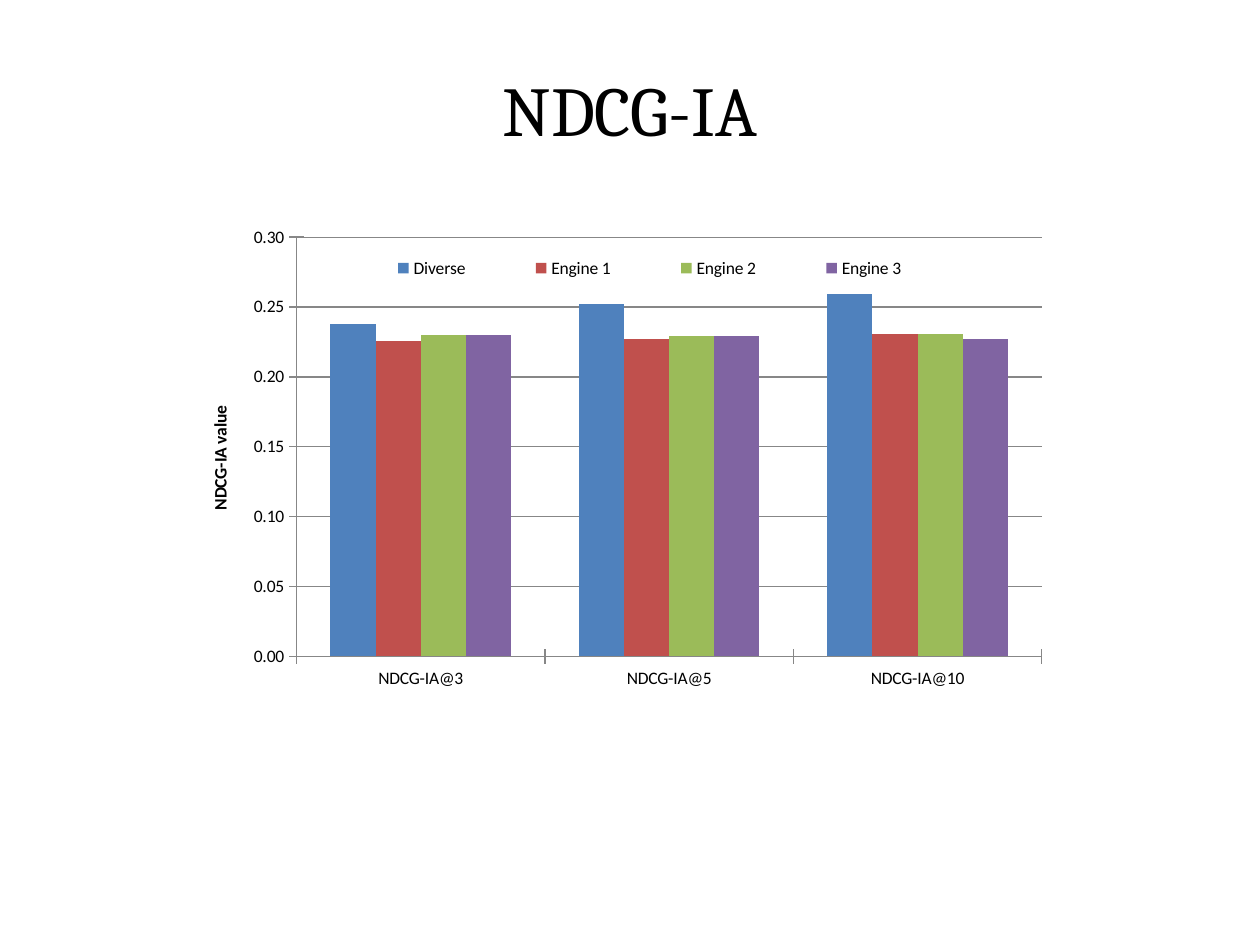
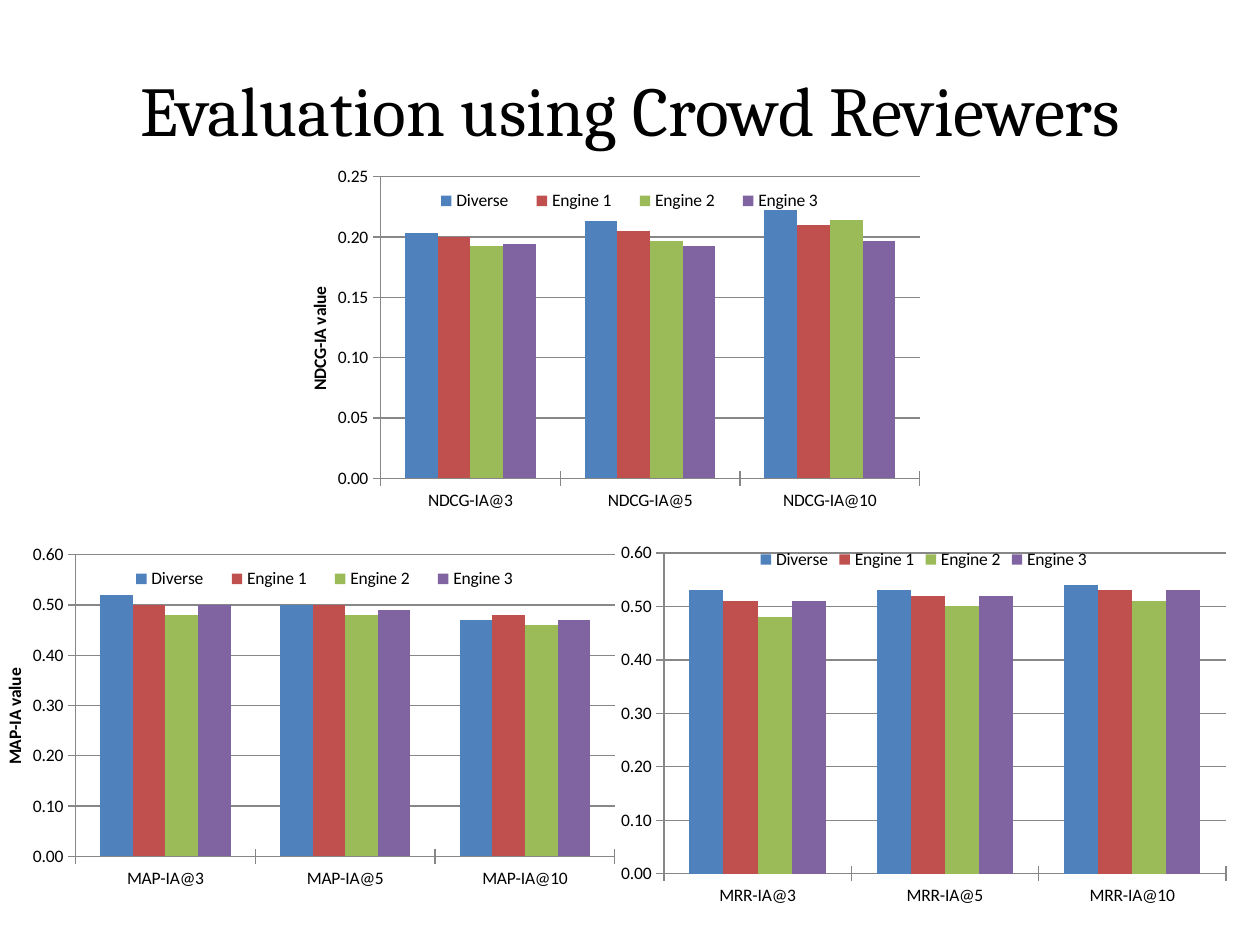
from dataclasses import dataclass

from pptx import Presentation
from pptx.chart.data import CategoryChartData
from pptx.dml.color import RGBColor
from pptx.enum.chart import XL_CHART_TYPE, XL_LEGEND_POSITION, XL_TICK_MARK
from pptx.enum.text import MSO_ANCHOR, PP_ALIGN
from pptx.oxml import parse_xml
from pptx.oxml.ns import nsdecls
from pptx.util import Inches, Pt


@dataclass(frozen=True)
class Theme:
    text: RGBColor = RGBColor(0, 0, 0)
    axis: RGBColor = RGBColor(0x87, 0x87, 0x87)
    series: tuple = ("4F81BD", "C0504D", "9BBB59", "8064A2")
    title_font: str = "Cambria"
    title_size: int = 40
    chart_font: str = "Calibri"
    chart_size: int = 10
    axis_width: float = 0.75


THEME = Theme()
ENGINES = ("Diverse", "Engine 1", "Engine 2", "Engine 3")
DEPTHS = (3, 5, 10)
TITLE_BOX = (0.5, 0.3, 9, 1.12)

# Inner plot and legend areas as fractions of the chart: x, y, width, height
WIDE_LAYOUT = {"plot": (0.119, 0.051, 0.825, 0.798), "legend": (0.16, 0.07, 0.7, 0.08)}
SMALL_LAYOUT = {"plot": (0.12, 0.051, 0.856, 0.798), "legend": (0.18, 0.075, 0.67, 0.08)}

# One row of values per engine, one value per depth
NDCG_VALUES = ((0.238, 0.252, 0.259), (0.226, 0.227, 0.231),
               (0.23, 0.229, 0.231), (0.23, 0.229, 0.227))
CROWD_NDCG_VALUES = ((0.203, 0.213, 0.222), (0.2, 0.205, 0.21),
                     (0.193, 0.197, 0.214), (0.194, 0.193, 0.197))
CROWD_MAP_VALUES = ((0.52, 0.5, 0.47), (0.5, 0.5, 0.48),
                    (0.48, 0.48, 0.46), (0.5, 0.49, 0.47))
CROWD_MRR_VALUES = ((0.53, 0.53, 0.54), (0.51, 0.52, 0.53),
                    (0.48, 0.5, 0.51), (0.51, 0.52, 0.53))


def apply_format(target, values):
    for name, value in values.items():
        setattr(target, name, value)


def style_font(font, name, size, bold=False):
    apply_format(font, {"name": name, "size": Pt(size), "bold": bold})
    font.color.rgb = THEME.text


def layout_xml(area, target=""):
    """Return a manual chart layout for the given fractions."""
    x, y, width, height = area
    return parse_xml(
        f'<c:layout {nsdecls("c")}><c:manualLayout>{target}'
        '<c:xMode val="edge"/><c:yMode val="edge"/>'
        f'<c:x val="{x}"/><c:y val="{y}"/><c:w val="{width}"/><c:h val="{height}"/>'
        "</c:manualLayout></c:layout>"
    )


def place_chart_parts(chart, layout):
    for old in chart.element.xpath(".//c:plotArea/c:layout | .//c:legend/c:layout"):
        old.getparent().remove(old)
    plot_area = chart.element.xpath(".//c:plotArea")[0]
    plot_area.insert(0, layout_xml(layout["plot"], '<c:layoutTarget val="inner"/>'))
    legend_position = chart.element.xpath(".//c:legend/c:legendPos")[0]
    legend_position.addnext(layout_xml(layout["legend"]))


def add_title(page, text, box=TITLE_BOX):
    frame = page.shapes.add_textbox(*map(Inches, box)).text_frame
    apply_format(frame, {"word_wrap": True, "vertical_anchor": MSO_ANCHOR.MIDDLE})
    para = frame.paragraphs[0]
    para.alignment = PP_ALIGN.CENTER
    span = para.add_run()
    span.text = text
    style_font(span.font, THEME.title_font, THEME.title_size)


def style_axes(chart, maximum, step, axis_title):
    value_axis = chart.value_axis
    apply_format(value_axis, {"minimum_scale": 0, "maximum_scale": maximum,
                              "major_unit": step, "has_major_gridlines": True})
    apply_format(value_axis.tick_labels, {"number_format": "#,##0.00",
                                          "number_format_is_linked": False})
    for axis in (chart.category_axis, value_axis):
        axis.major_tick_mark = XL_TICK_MARK.CROSS
    for part in (chart.category_axis, value_axis, value_axis.major_gridlines):
        part.format.line.color.rgb = THEME.axis
        part.format.line.width = Pt(THEME.axis_width)

    value_axis.has_title = bool(axis_title)
    if axis_title:
        span = value_axis.axis_title.text_frame.paragraphs[0].add_run()
        span.text = axis_title
        style_font(span.font, THEME.chart_font, THEME.chart_size, bold=True)


def add_metric_chart(page, box, metric, values, maximum, step, layout=None):
    """Compare the engines; without a layout the legend overlays the top."""
    data = CategoryChartData(number_format="General")
    data.categories = [f"{metric}@{depth}" for depth in DEPTHS]
    for engine, row in zip(ENGINES, values):
        data.add_series(engine, row)
    chart = page.shapes.add_chart(
        XL_CHART_TYPE.COLUMN_CLUSTERED, *map(Inches, box), data).chart
    chart.has_title = False
    style_font(chart.font, THEME.chart_font, THEME.chart_size)

    # Columns
    plot = chart.plots[0]
    apply_format(plot, {"vary_by_categories": False, "gap_width": 150, "overlap": 0})
    for series, color in zip(plot.series, THEME.series):
        series.format.fill.solid()
        series.format.fill.fore_color.rgb = RGBColor.from_string(color)

    # Axes and legend
    style_axes(chart, maximum, step, f"{metric} value" if layout else None)
    chart.has_legend = True
    position = XL_LEGEND_POSITION.RIGHT if layout else XL_LEGEND_POSITION.TOP
    apply_format(chart.legend, {"position": position, "include_in_layout": not layout})
    if layout:
        place_chart_parts(chart, layout)


def build_ndcg_page(page):
    add_title(page, "NDCG-IA")
    add_metric_chart(page, (1.5, 1.67, 7.17, 4.17), "NDCG-IA", NDCG_VALUES,
                     0.3, 0.05, WIDE_LAYOUT)


def build_crowd_page(page):
    add_title(page, "Evaluation using Crowd Reviewers")
    size = (5, 3)
    top_row, bottom_row = 1.25, 4.25
    add_metric_chart(page, (0, bottom_row, *size), "MAP-IA", CROWD_MAP_VALUES,
                     0.6, 0.1, SMALL_LAYOUT)
    add_metric_chart(page, (2.42, top_row, *size), "NDCG-IA", CROWD_NDCG_VALUES,
                     0.25, 0.05, SMALL_LAYOUT)
    add_metric_chart(page, (4.83, bottom_row, *size), "MRR-IA", CROWD_MRR_VALUES,
                     0.6, 0.1)


def main():
    deck = Presentation()
    apply_format(deck, {"slide_width": Inches(10), "slide_height": Inches(7.5)})
    blank = deck.slide_layouts[6]
    for build_page in (build_ndcg_page, build_crowd_page):
        build_page(deck.slides.add_slide(blank))
    deck.save("out.pptx")


if __name__ == "__main__":
    main()
